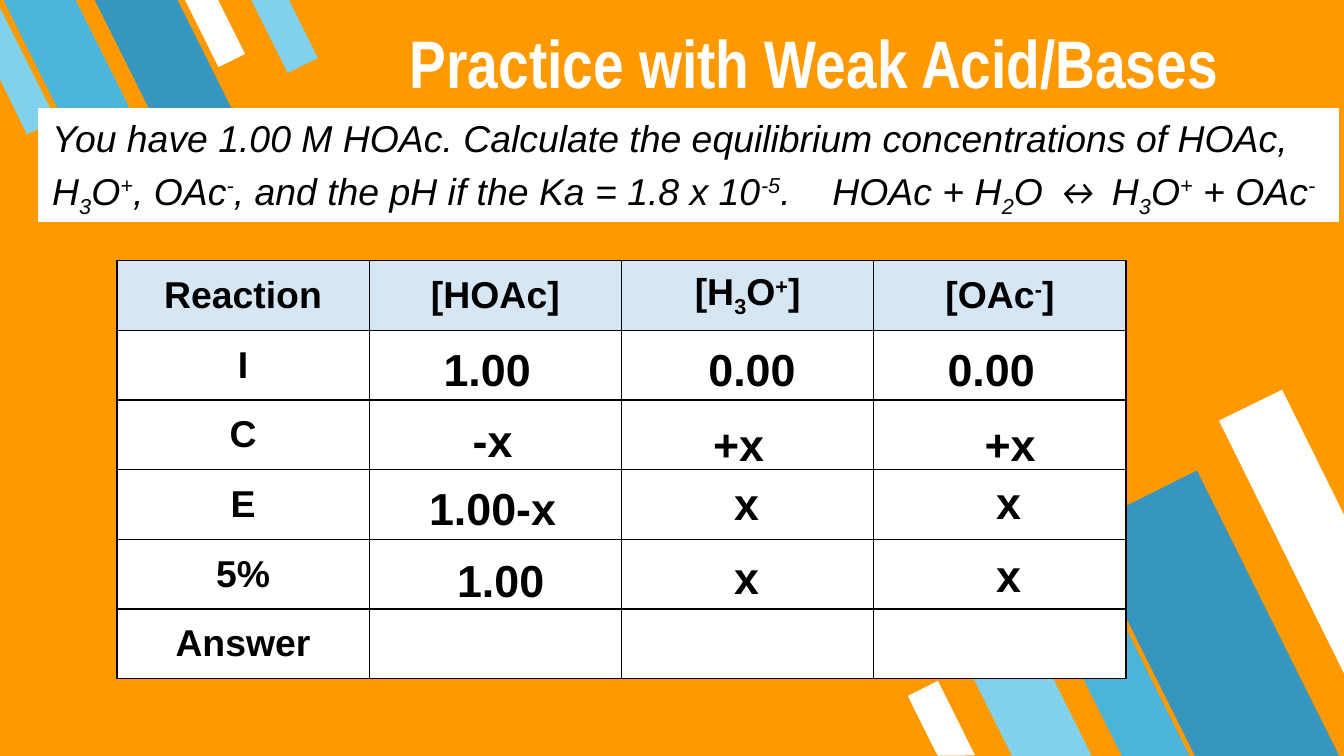
"""Build the weak acid practice slide with its equilibrium table."""
from lxml import etree
from pptx import Presentation
from pptx import util as u
from pptx.dml.color import RGBColor
from pptx.enum import shapes, text
from pptx.oxml.ns import qn

PX = 4572
THEME = {
    "orange": RGBColor(0xFF, 0x99, 0x00),
    "white": RGBColor(0xFF, 0xFF, 0xFF),
    "black": RGBColor(0x00, 0x00, 0x00),
    "sky": RGBColor(0x81, 0xD1, 0xEC),
    "aqua": RGBColor(0x4B, 0xB5, 0xD9),
    "steel": RGBColor(0x37, 0x96, 0xBF),
    "header": RGBColor(0xD6, 0xE6, 0xF2),
    "title": 36, "body": 20, "value": 24, "rule": 0.75,
    "title_font": "Arial Narrow", "font": "Arial", "arrow_font": "Calibri",
}


def write(para, content, size="body", color="black", font="font", bold=False, italic=False, align=None):
    """Add spans split at |, where a leading _ lowers and ^ raises."""
    para.alignment = align
    for piece in content.split("|"):
        span = para.add_run()
        span.text = piece.lstrip("_^")
        span.font.size = u.Pt(THEME[size])
        span.font.name = THEME["arrow_font" if piece == "↔" else font]
        span.font.color.rgb = THEME[color]
        span.font.bold, span.font.italic = bold, italic
        if piece[0] in "_^":
            span.font._element.set("baseline", "-25000" if piece[0] == "_" else "30000")


def paint(shape, color):
    """Give a shape a plain fill with no line or shadow."""
    shape.shadow.inherit = False
    shape.fill.solid()
    shape.fill.fore_color.rgb = THEME[color]
    shape.line.fill.background()


deck = Presentation()
deck.slide_width, deck.slide_height = 2000 * PX, 1125 * PX
page = deck.slides.add_slide(deck.slide_layouts[6])
page.background.fill.solid()
page.background.fill.fore_color.rgb = THEME["orange"]

stripes = [
    (1466, 900, 106, 264, 153.5, "sky"),
    (1706, 718, 192, 478, 153.5, "steel"),
    (1636, 936, 90, 222, 153.5, "aqua"),
    (1376, 1018, 50, 124, 153.5, "white"),
    (298, -16, 44, 112, 333.5, "white"),
    (52, -36, 96, 236, 333.5, "aqua"),
    (196, -40, 110, 274, 333.5, "steel"),
    (398, -20, 50, 124, 333.5, "sky"),
]
for left, top, width, height, angle, color in stripes:
    stripe = page.shapes.add_shape(
        shapes.MSO_SHAPE.FLOWCHART_MANUAL_INPUT, left * PX, top * PX, width * PX, height * PX)
    stripe.rotation = angle
    stripe._element.spPr.find(qn("a:xfrm")).set("flipH", "1")
    paint(stripe, color)

edge_stripes = [
    ([(1908, 580), (1814, 626), (2000, 1002), (2000, 766)], "white"),
    ([(40, 200), (84, 180), (0, 12), (0, 118)], "sky"),
]
for points, color in edge_stripes:
    builder = page.shapes.build_freeform(*points[0], scale=PX)
    builder.add_line_segments(points[1:], close=True)
    paint(builder.convert_to_shape(), color)

title = page.shapes.add_textbox(590 * PX, 12 * PX, 1410 * PX, 148 * PX).text_frame
title.word_wrap = True
title.margin_top = title.margin_bottom = 20 * PX
write(title.paragraphs[0], "Practice with Weak Acid/Bases",
      size="title", color="white", font="title_font", bold=True)

question = page.shapes.add_shape(shapes.MSO_SHAPE.RECTANGLE, 58 * PX, 162 * PX, 1934 * PX, 168 * PX)
paint(question, "white")
question.line.color.rgb = THEME["white"]
question.line.width = u.Pt(THEME["rule"])
frame = question.text_frame
frame.word_wrap = True
frame.vertical_anchor = text.MSO_ANCHOR.TOP
left_align = text.PP_ALIGN.LEFT
write(frame.paragraphs[0], "You have 1.00 M HOAc. Calculate the equilibrium concentrations of HOAc,",
      italic=True, align=left_align)
para = frame.add_paragraph()
para.space_before = u.Pt(4)
tabs = etree.SubElement(para._p.get_or_add_pPr(), qn("a:tabLst"))
etree.SubElement(tabs, qn("a:tab"), pos=str(1161 * PX), algn="l")
write(para, "H|_3|O|^+|, OAc|^-|, and the pH if the Ka = 1.8 x 10|^-5|.\tHOAc + H|_2|O |↔| H|_3|O|^+| + OAc|^-",
      italic=True, align=left_align)

header = ["Reaction", "[HOAc]", "[H|_3|O|^+|]", "[OAc|^-|]"]
rows = [header] + [[label, "", "", ""] for label in ("I", "C", "E", "5%", "Answer")]
table = page.shapes.add_table(len(rows), len(header), 174 * PX, 388 * PX, 1502 * PX, 622 * PX).table
table.first_row = table.horz_banding = False
center = text.PP_ALIGN.CENTER
for row_index, row in enumerate(rows):
    for column_index, content in enumerate(row):
        cell = table.cell(row_index, column_index)
        cell.vertical_anchor = text.MSO_ANCHOR.MIDDLE
        if content:
            write(cell.text_frame.paragraphs[0], content, bold=True, align=center)
        properties = cell._tc.get_or_add_tcPr()
        for side in ("lnL", "lnR", "lnT", "lnB"):
            border = etree.SubElement(properties, qn(f"a:{side}"), w=str(u.Pt(THEME["rule"])))
            fill = etree.SubElement(border, qn("a:solidFill"))
            etree.SubElement(fill, qn("a:srgbClr"), val=str(THEME["black"]))
        cell.fill.solid()
        cell.fill.fore_color.rgb = THEME["white" if row_index else "header"]

values = [
    (570, 498, "1.00"), (964, 498, "0.00"), (1320, 498, "0.00"),
    (578, 604, "-x"), (944, 610, "+x"), (1348, 610, "+x"),
    (578, 706, "1.00-x"), (956, 698, "x"), (1346, 696, "x"),
    (590, 812, "1.00"), (956, 808, "x"), (1346, 806, "x"),
]
for left, top, content in values:
    box = page.shapes.add_textbox(left * PX, top * PX, 310 * PX, 100 * PX)
    box.text_frame.word_wrap = True
    write(box.text_frame.paragraphs[0], content, size="value", bold=True, align=center)

deck.save("out.pptx")
